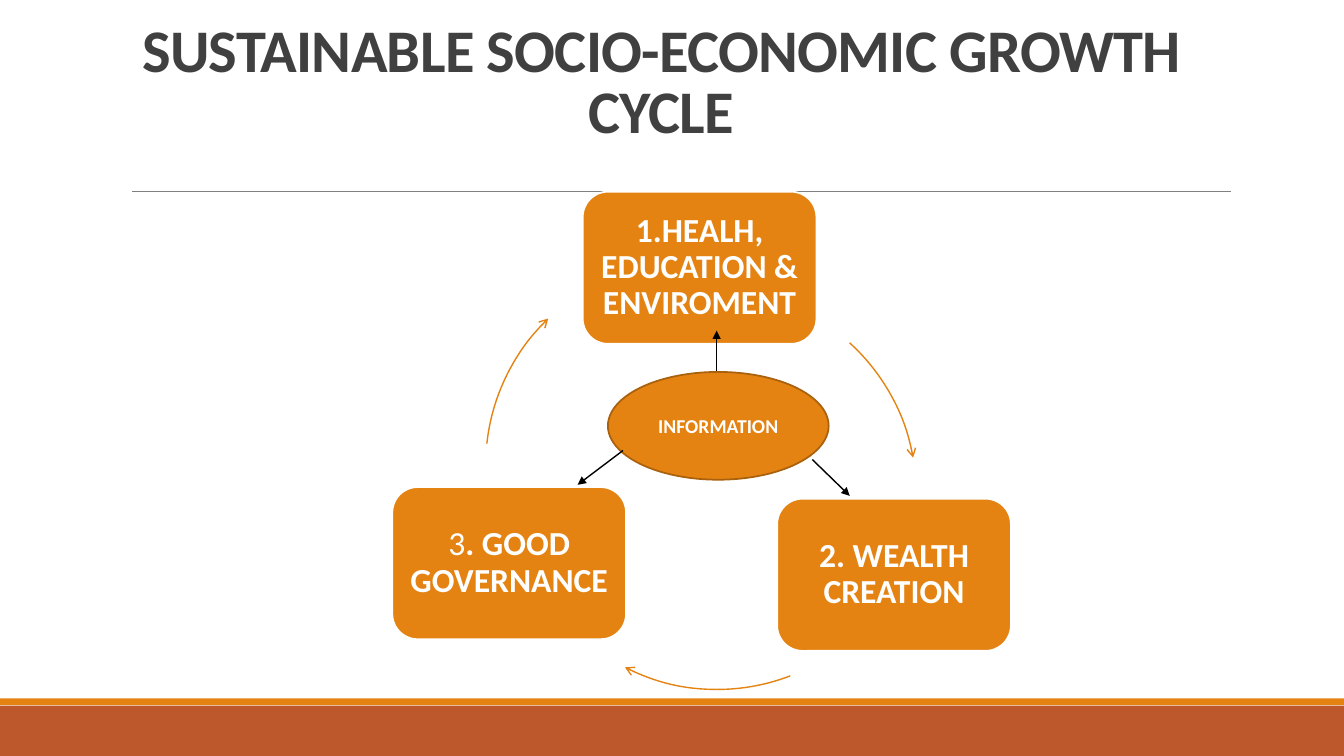
from dataclasses import dataclass

from lxml.etree import SubElement
from pptx import Presentation
from pptx.dml.color import RGBColor
from pptx.enum.shapes import MSO_CONNECTOR, MSO_SHAPE
from pptx.enum.text import MSO_ANCHOR, PP_ALIGN
from pptx.oxml.ns import qn
from pptx.util import Pt


@dataclass(frozen=True)
class Theme:
    font: str = "Calibri"
    orange: str = "E48312"
    rust: str = "BD582C"
    brown: str = "A9610D"
    grey: str = "808080"
    ink: str = "404040"
    black: str = "000000"
    white: str = "FFFFFF"
    title_size: float = 43.2
    card_size: float = 24
    hub_size: float = 14


THEME = Theme()
PAGE_WIDTH, PAGE_HEIGHT = 960, 540
CARD_WIDTH, CARD_HEIGHT = 167, 108.7
CYCLE_DIAMETER = 290.2
DEGREE = 0.6

CARDS = [
    (416.2, 136.9, [("1.HEALH, EDUCATION & ENVIROMENT", True)]),
    (555.1, 356.2, [("2. WEALTH CREATION", True)]),
    (280.2, 347.9, [("3", False), (". GOOD GOVERNANCE", True)]),
]
CYCLE_ARROWS = [
    (364.3, 207.3, 312.2, 349.9),
    (367.2, 202.3, 68.9, 117),
    (347, 187.2, 186.1, 226.2),
]
SPOKES = [
    (580.3, 328.3, 607, 354.2),
    (511.9, 265, 511.9, 236.2),
    (445, 321.8, 412.6, 346.3),
]


def color(value):
    return RGBColor.from_string(value)


def set_line(shape, line_color, width):
    shape.line.color.rgb = color(line_color)
    shape.line.width = Pt(width)


def add_arrowhead(shape, kind):
    SubElement(shape.line._get_or_add_ln(), qn("a:tailEnd"), type=kind)


def write_text(box, spans, size, text_color, anchor=MSO_ANCHOR.MIDDLE, spacing=1.0):
    frame = box.text_frame
    frame.word_wrap = True
    frame.vertical_anchor = anchor
    para = frame.paragraphs[0]
    para.alignment = PP_ALIGN.CENTER
    para.line_spacing = spacing
    for text, bold in spans:
        span = para.add_run()
        span.text = text
        span.font.name = THEME.font
        span.font.size = Pt(size)
        span.font.bold = bold
        span.font.color.rgb = color(text_color)
    return para


def add_filled(page, kind, left, top, width, height, fill):
    shape = page.shapes.add_shape(kind, Pt(left), Pt(top), Pt(width), Pt(height))
    shape.shadow.inherit = False
    shape.fill.solid()
    shape.fill.fore_color.rgb = color(fill)
    shape.line.fill.background()
    return shape


def add_line(page, start_x, start_y, end_x, end_y, line_color, width):
    line = page.shapes.add_connector(
        MSO_CONNECTOR.STRAIGHT, Pt(start_x), Pt(start_y), Pt(end_x), Pt(end_y))
    set_line(line, line_color, width)
    SubElement(line._element.spPr, qn("a:effectLst"))
    return line


def add_title(page, text):
    box = page.shapes.add_textbox(Pt(42.5), Pt(15.8), Pt(859.7), Pt(92.2))
    para = write_text(box, [(text, True)], THEME.title_size, THEME.ink,
                      MSO_ANCHOR.BOTTOM, 0.85)
    para.runs[0].font._element.set("spc", "-50")


def add_card(page, left, top, spans):
    card = add_filled(page, MSO_SHAPE.ROUNDED_RECTANGLE, left, top,
                      CARD_WIDTH, CARD_HEIGHT, THEME.orange)
    set_line(card, THEME.white, 1.25)
    frame = card.text_frame
    frame.margin_left = frame.margin_right = Pt(7.2)
    frame.margin_top = frame.margin_bottom = Pt(7.2)
    write_text(card, spans, THEME.card_size, THEME.white, spacing=0.9)


def add_cycle_arrow(page, left, top, start, end):
    arc = page.shapes.add_shape(MSO_SHAPE.ARC, Pt(left), Pt(top),
                                Pt(CYCLE_DIAMETER), Pt(CYCLE_DIAMETER))
    arc.adjustments[0] = start * DEGREE
    arc.adjustments[1] = end * DEGREE
    arc.shadow.inherit = False
    arc.fill.background()
    set_line(arc, THEME.orange, 1)
    add_arrowhead(arc, "arrow")


def add_hub(page, text):
    hub = add_filled(page, MSO_SHAPE.OVAL, 434.2, 265.7, 157.7, 77, THEME.orange)
    set_line(hub, THEME.brown, 1.25)
    write_text(hub, [(text, True)], THEME.hub_size, THEME.white)


def add_spoke(page, *ends):
    spoke = add_line(page, *ends, THEME.black, 1)
    add_arrowhead(spoke, "triangle")


def main():
    deck = Presentation()
    deck.slide_width, deck.slide_height = Pt(PAGE_WIDTH), Pt(PAGE_HEIGHT)
    page = deck.slides.add_slide(deck.slide_layouts[6])

    add_filled(page, MSO_SHAPE.RECTANGLE, 0, 504, PAGE_WIDTH, 36, THEME.rust)
    add_filled(page, MSO_SHAPE.RECTANGLE, 0, 498.8, PAGE_WIDTH, 5, THEME.orange)
    add_line(page, 94.3, 136.8, 879.1, 136.8, THEME.grey, 0.5)
    add_title(page, "SUSTAINABLE SOCIO-ECONOMIC GROWTH CYCLE")

    for card, arrow in zip(CARDS, CYCLE_ARROWS):
        add_card(page, *card)
        add_cycle_arrow(page, *arrow)
    add_hub(page, "INFORMATION")
    for spoke in SPOKES:
        add_spoke(page, *spoke)

    deck.save("out.pptx")


if __name__ == "__main__":
    main()
